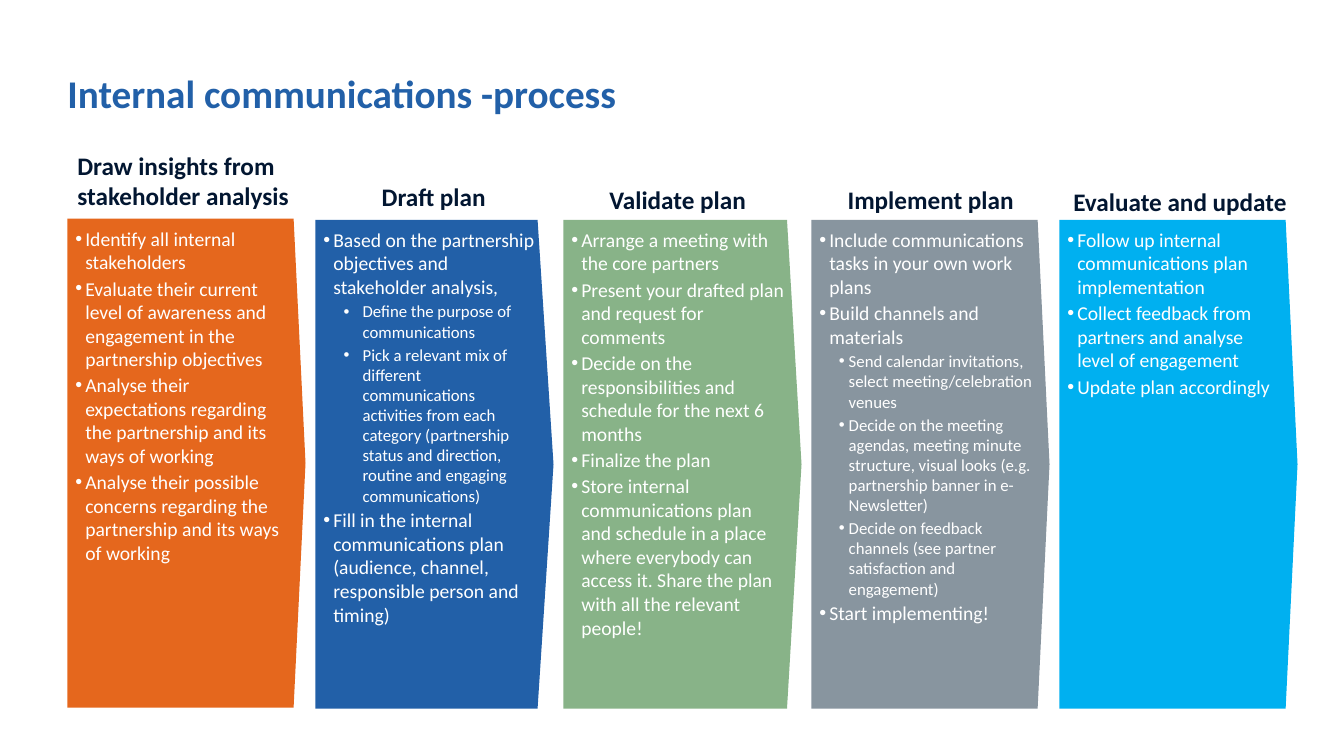
from lxml.etree import SubElement
from pptx import Presentation
from pptx.dml.color import RGBColor
from pptx.enum.shapes import MSO_SHAPE
from pptx.enum.text import MSO_ANCHOR, MSO_AUTO_SIZE, PP_ALIGN
from pptx.oxml.ns import qn
from pptx.util import Cm, Pt

COLORS = {
    "title": "2260A8", "heading": "021631", "body": "FFFFFF",
    "insights": "E5671D", "draft": "2260A8", "validate": "88B388",
    "implement": "88959F", "evaluate": "00B0F0",
}
FIRST_LEFT, STAGE_PITCH = 1.7, 6.25
STAGE_WIDTH, STAGE_HEIGHT = 6, 12.32

STAGES = [
    {"heading": "Draw insights from stakeholder analysis", "heading_box": (1.7, 3.66, 6.88, 1.8),
     "wrap": True, "color": "insights", "top": 5.51, "point": 0.05, "sub_indent": (0.74, -0.25),
     "steps": [
         (0, "Identify all internal stakeholders"),
         (0, "Evaluate their current level of awareness and engagement in the partnership objectives"),
         (0, "Analyse their expectations regarding the partnership and its ways of working"),
         (0, "Analyse their possible concerns regarding the partnership and its ways of working")]},
    {"heading": "Draft plan", "heading_box": (9.37, 4.45, 3.18, 1.02),
     "wrap": False, "color": "draft", "top": 5.54, "point": 0.067, "sub_indent": (0.99, -0.48),
     "steps": [
         (0, "Based on the partnership objectives and stakeholder analysis,"),
         (1, "Define the purpose of communications"),
         (1, "Pick a relevant mix of different communications activities from each category "
             "(partnership status and direction, routine and engaging communications)"),
         (0, "Fill in the internal communications plan (audience, channel, responsible person and timing)")]},
    {"heading": "Validate plan", "heading_box": (15.11, 4.52, 3.99, 1.02),
     "wrap": False, "color": "validate", "top": 5.54, "point": 0.061, "sub_indent": (0.74, -0.25),
     "steps": [
         (0, "Arrange a meeting with the core partners"),
         (0, "Present your drafted plan and request for comments"),
         (0, "Decide on the responsibilities and schedule for the next 6 months"),
         (0, "Finalize the plan"),
         (0, "Store internal communications plan and schedule in a place where everybody can access it. "
             "Share the plan with all the relevant people!")]},
    {"heading": "Implement plan", "heading_box": (21.11, 4.52, 4.72, 1.02),
     "wrap": False, "color": "implement", "top": 5.54, "point": 0.05, "sub_indent": (0.74, -0.25),
     "steps": [
         (0, "Include communications tasks in your own work plans"),
         (0, "Build channels and materials"),
         (1, "Send calendar invitations, select meeting/celebration venues"),
         (1, "Decide on the meeting agendas, meeting minute structure, visual looks "
             "(e.g. partnership banner in e-Newsletter)"),
         (1, "Decide on feedback channels (see partner satisfaction and engagement)"),
         (0, "Start implementing!")]},
    {"heading": "Evaluate and update", "heading_box": (26.8, 4.57, 5.94, 1.02),
     "wrap": False, "color": "evaluate", "top": 5.54, "point": 0.05, "sub_indent": (0.74, -0.25),
     "steps": [
         (0, "Follow up internal communications plan implementation"),
         (0, "Collect feedback from partners and analyse level of engagement"),
         (0, "Update plan accordingly")]},
]


class ProcessSlide:
    """Hold the text style and the slide that the process is drawn on."""

    font_name = "Calibri"
    step_sizes = (14, 12)
    step_indent = (0.25, -0.25)

    def __init__(self, slide):
        self.slide = slide

    def style(self, paragraph, size, color, bold=False):
        """Format the runs of a left-aligned paragraph."""
        paragraph.alignment = PP_ALIGN.LEFT
        for run in paragraph.runs:
            run.font.name = self.font_name
            run.font.size = Pt(size)
            run.font.bold = bold
            run.font.color.rgb = RGBColor.from_string(COLORS[color])

    def insets(self, frame, left, top, right, bottom):
        """Set the inner margins of a text frame."""
        frame.margin_left, frame.margin_top = Cm(left), Cm(top)
        frame.margin_right, frame.margin_bottom = Cm(right), Cm(bottom)

    def title(self, text):
        """Fill and place the title placeholder."""
        title = self.slide.shapes.title
        title.left, title.top, title.width, title.height = Cm(1.7), Cm(0.53), Cm(26.06), Cm(2.54)
        frame = title.text_frame
        frame.text = text
        frame.auto_size = MSO_AUTO_SIZE.NONE
        frame.vertical_anchor = MSO_ANCHOR.BOTTOM
        self.insets(frame, 0, 0.2, 0.25, 0.13)
        self.style(frame.paragraphs[0], 28, "title", bold=True)

    def heading(self, text, box, wrap):
        """Add the heading above a stage."""
        frame = self.slide.shapes.add_textbox(*map(Cm, box)).text_frame
        frame.text = text
        frame.word_wrap = wrap
        frame.auto_size = MSO_AUTO_SIZE.SHAPE_TO_FIT_TEXT
        self.style(frame.paragraphs[0], 18, "heading", bold=True)

    def bullet(self, paragraph, margin, indent):
        """Give a paragraph a bullet with a hanging indent."""
        properties = paragraph._p.get_or_add_pPr()
        properties.set("marL", str(Cm(margin)))
        properties.set("indent", str(Cm(indent)))
        SubElement(properties, qn("a:buFont")).set("typeface", "Arial")
        SubElement(properties, qn("a:buChar")).set("char", "•")

    def stage(self, left, top, color, point, steps, sub_indent):
        """Add a pentagon holding the bulleted steps of a stage."""
        pentagon = self.slide.shapes.add_shape(
            MSO_SHAPE.PENTAGON, Cm(left), Cm(top), Cm(STAGE_WIDTH), Cm(STAGE_HEIGHT))
        pentagon.adjustments[0] = point
        pentagon.shadow.inherit = False
        pentagon.fill.solid()
        pentagon.fill.fore_color.rgb = RGBColor.from_string(COLORS[color])
        pentagon.line.fill.background()
        frame = pentagon.text_frame
        frame.word_wrap = True
        frame.vertical_anchor = MSO_ANCHOR.TOP
        self.insets(frame, 0.2, 0.2, 0.2, 0.2)
        for number, (level, text) in enumerate(steps):
            step = frame.add_paragraph() if number else frame.paragraphs[0]
            step.text = text
            step.level = level
            self.bullet(step, *(sub_indent if level else self.step_indent))
            step.space_before = Pt(1 if number else 0)
            step.space_after = Pt(1)
            self.style(step, self.step_sizes[level], "body")


def main():
    """Build the process slide and save it."""
    presentation = Presentation()
    presentation.slide_width, presentation.slide_height = Cm(33.87), Cm(19.05)
    process = ProcessSlide(presentation.slides.add_slide(presentation.slide_layouts[5]))
    process.title("Internal communications -process")
    for column, stage in enumerate(STAGES):
        process.stage(FIRST_LEFT + column * STAGE_PITCH, stage["top"], stage["color"],
                      stage["point"], stage["steps"], stage["sub_indent"])
        process.heading(stage["heading"], stage["heading_box"], stage["wrap"])
    presentation.save("out.pptx")


if __name__ == "__main__":
    main()
